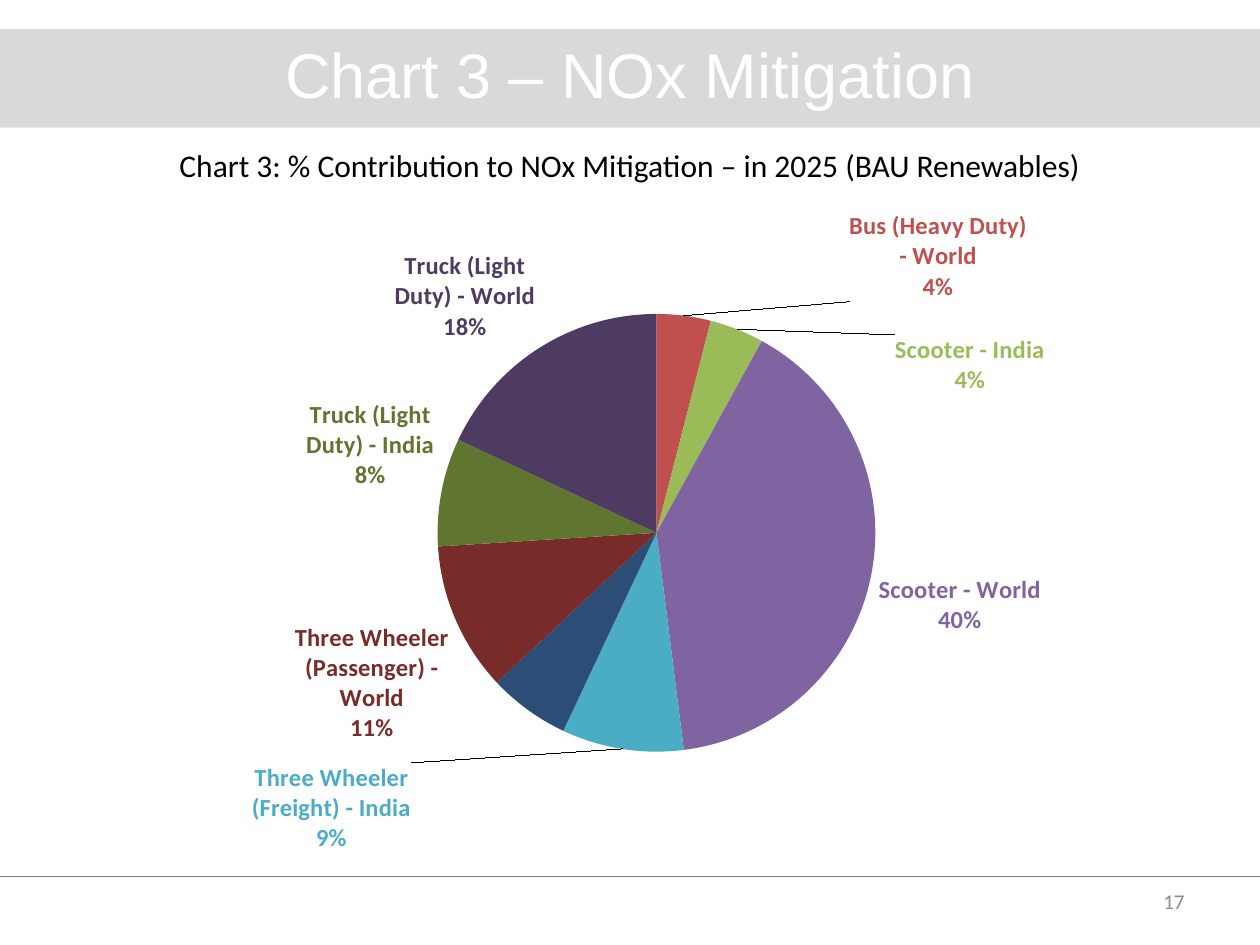
from lxml import etree
from pptx import Presentation
from pptx.chart.data import CategoryChartData
from pptx.dml.color import RGBColor
from pptx.enum.chart import XL_CHART_TYPE, XL_LABEL_POSITION
from pptx.enum.dml import MSO_LINE
from pptx.enum.shapes import MSO_CONNECTOR, MSO_SHAPE
from pptx.enum.text import MSO_ANCHOR, PP_ALIGN
from pptx.oxml.ns import qn
from pptx.util import Pt

CENTER, RIGHT = PP_ALIGN.CENTER, PP_ALIGN.RIGHT
TOP, MIDDLE = MSO_ANCHOR.TOP, MSO_ANCHOR.MIDDLE
OUTSIDE_END = XL_LABEL_POSITION.OUTSIDE_END
BLACK = RGBColor(0x00, 0x00, 0x00)
WHITE = RGBColor(0xFF, 0xFF, 0xFF)
BAND_GRAY = RGBColor(0xD9, 0xD9, 0xD9)
LINE_GRAY = RGBColor(0x80, 0x80, 0x80)
NUMBER_GRAY = RGBColor(0x8C, 0x8C, 0x8C)

# Content: text, box, size, font, colour, alignment, anchor
TEXTS = [
    ("Chart 3 – NOx Mitigation", (0, 16.5, 720, 50.5), 36, "Arial", WHITE, CENTER, MIDDLE),
    ("Chart 3: % Contribution to NOx Mitigation – in 2025 (BAU Renewables)",
     (2.5, 80, 715, 29), 18, "Calibri", BLACK, CENTER, TOP),
    ("17", (516, 500.5, 168, 28.75), 12, "Calibri", NUMBER_GRAY, RIGHT, MIDDLE),
]

# Category, value, colour, whether it is labelled
SLICES = [
    ("Bus (Heavy Duty) - India", 0, RGBColor(0x4F, 0x81, 0xBD), False),
    ("Bus (Heavy Duty) - World", 4, RGBColor(0xC0, 0x50, 0x4D), True),
    ("Scooter - India", 4, RGBColor(0x9B, 0xBB, 0x59), True),
    ("Scooter - World", 40, RGBColor(0x80, 0x64, 0xA2), True),
    ("Three Wheeler (Freight) - India", 9, RGBColor(0x4B, 0xAC, 0xC6), True),
    ("Three Wheeler (Freight) - World", 0, RGBColor(0xF7, 0x96, 0x46), False),
    ("Three Wheeler (Passenger) - India", -6, RGBColor(0x2C, 0x4D, 0x75), False),
    ("Three Wheeler (Passenger) - World", 11, RGBColor(0x77, 0x2C, 0x2A), True),
    ("Truck (Light Duty) - India", 8, RGBColor(0x5F, 0x75, 0x30), True),
    ("Truck (Light Duty) - World", 18, RGBColor(0x4D, 0x3B, 0x62), True),
]
CHART_BOX = (98.5, 115, 522, 379)
PLOT_AREA = {"x": 0.29, "y": 0.17, "w": 0.48, "h": 0.66}
# Labels moved away from the pie, as fractions of the chart
LABEL_SHIFTS = {
    "Bus (Heavy Duty) - World": {"x": 0.18, "y": -0.01},
    "Scooter - India": {"x": 0.17, "y": 0.11},
    "Three Wheeler (Freight) - India": {"x": -0.23, "y": 0.01},
}


def points(box):
    return [Pt(length) for length in box]


def add_text(slide, text, box, size, font, color, alignment, anchor):
    frame = slide.shapes.add_textbox(*points(box)).text_frame
    frame.word_wrap = True
    frame.vertical_anchor = anchor
    paragraph = frame.paragraphs[0]
    paragraph.alignment = alignment
    run = paragraph.add_run()
    run.text = text
    run.font.size = Pt(size)
    run.font.name = font
    run.font.color.rgb = color


def style_font(font, size, color, bold=False):
    font.size = Pt(size)
    font.name = "Calibri"
    font.bold = bold
    font.color.rgb = color


def make_layout(fractions, inner=False):
    layout = etree.Element(qn("c:layout"))
    manual = etree.SubElement(layout, qn("c:manualLayout"))
    settings = dict(fractions)
    if inner:
        settings = {"layoutTarget": "inner", "xMode": "edge", "yMode": "edge", **settings}
    for name, value in settings.items():
        etree.SubElement(manual, qn(f"c:{name}")).set("val", str(value))
    return layout


def show_category_and_percent(element):
    for name, value in (("showVal", "0"), ("showCatName", "1"), ("showPercent", "1")):
        element.find(qn(f"c:{name}")).set("val", value)
    separator = etree.Element(qn("c:separator"))
    separator.text = "\n"
    last_flag = element.find(qn("c:showBubbleSize"))
    if last_flag is None:
        last_flag = element.find(qn("c:showPercent"))
    last_flag.addnext(separator)


def add_pie(slide):
    data = CategoryChartData()
    data.categories = [name for name, *_ in SLICES]
    data.add_series("Series 1", [value for _, value, *_ in SLICES])
    chart = slide.shapes.add_chart(XL_CHART_TYPE.PIE, *points(CHART_BOX), data).chart
    chart.has_legend = False
    chart.has_title = False
    style_font(chart.font, 10, BLACK)
    plot = chart.plots[0]
    plot.vary_by_categories = True
    series = plot.series[0]

    # Shared label settings
    labels = series.data_labels
    labels.number_format = "0%"
    labels.number_format_is_linked = False
    labels.position = OUTSIDE_END
    style_font(labels.font, 14, SLICES[0][2], True)
    labels_element = series._element.find(qn("c:dLbls"))
    show_category_and_percent(labels_element)

    # Slice colours and matching labels
    for index, (name, _, color, labelled) in enumerate(SLICES):
        point = series.points[index]
        point.format.fill.solid()
        point.format.fill.fore_color.rgb = color
        point.format.line.fill.background()
        label = point.data_label
        label.position = OUTSIDE_END
        style_font(label.font, 14, color, True)
        element = labels_element.findall(qn("c:dLbl"))[index]
        if not labelled:
            for child in list(element)[1:]:
                element.remove(child)
            etree.SubElement(element, qn("c:delete")).set("val", "1")
            continue
        show_category_and_percent(element)
        if name in LABEL_SHIFTS:
            element.insert(1, make_layout(LABEL_SHIFTS[name]))

    # Fixed pie position
    plot_area = chart._chartSpace.find(f".//{qn('c:plotArea')}")
    for layout in plot_area.findall(qn("c:layout")):
        plot_area.remove(layout)
    plot_area.insert(0, make_layout(PLOT_AREA, inner=True))


def main():
    presentation = Presentation()
    presentation.slide_width, presentation.slide_height = Pt(720), Pt(540)
    slide = presentation.slides.add_slide(presentation.slide_layouts[6])

    # Title band
    band = slide.shapes.add_shape(MSO_SHAPE.RECTANGLE, *points((0, 16.5, 720, 56.5)))
    band.shadow.inherit = False
    band.fill.solid()
    band.fill.fore_color.rgb = BAND_GRAY
    band.line.fill.background()

    # Footer rule
    rule = slide.shapes.add_connector(MSO_CONNECTOR.STRAIGHT, *points((0, 500.5, 720, 500.5)))
    rule.line.color.rgb = LINE_GRAY
    rule.line.width = Pt(0.25)
    rule.line.dash_style = MSO_LINE.ROUND_DOT
    etree.SubElement(rule._element.spPr, qn("a:effectLst"))

    for text in TEXTS:
        add_text(slide, *text)
    add_pie(slide)
    presentation.save("out.pptx")


if __name__ == "__main__":
    main()
